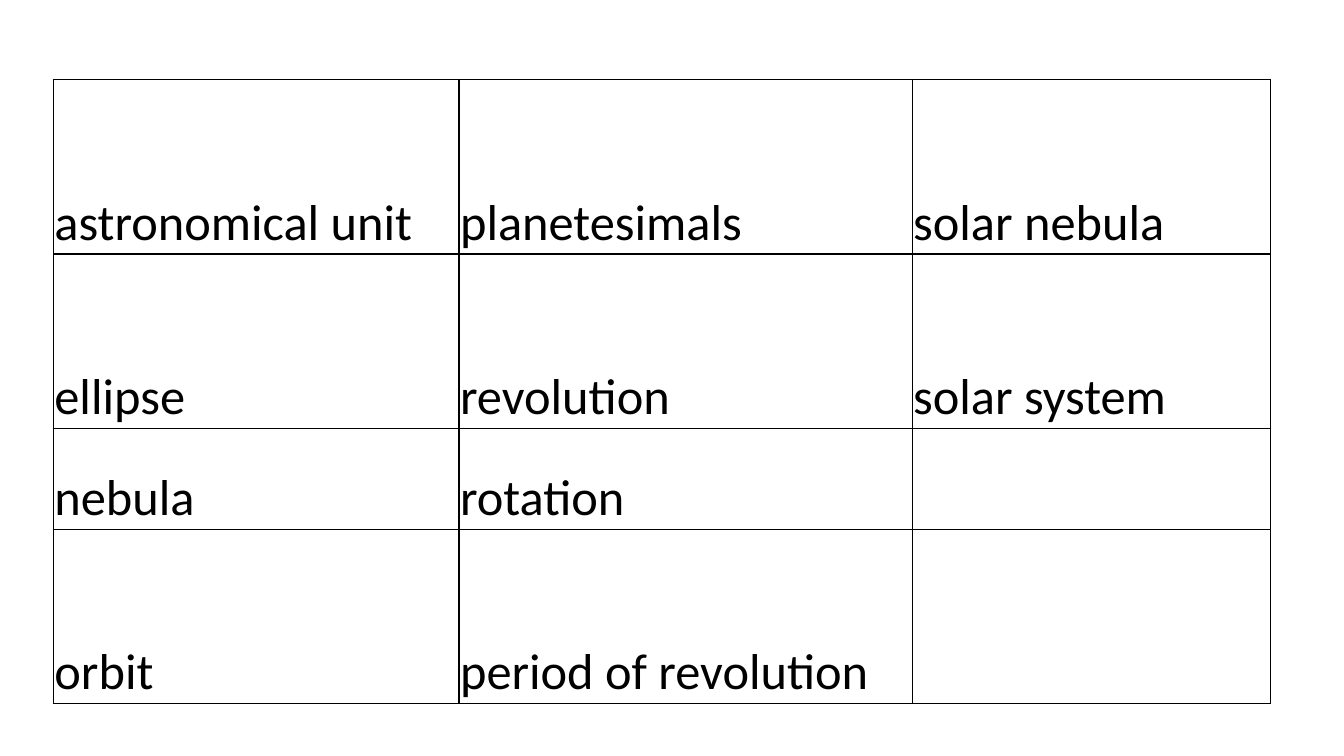
from dataclasses import dataclass

from lxml import etree
from pptx import Presentation
from pptx import util as u
from pptx.dml import color
from pptx.enum import text
from pptx.oxml import ns


@dataclass(frozen=True)
class Theme:
    ink: str = "000000"
    font: str = "Calibri"
    size: int = 36
    line: int = 1


THEME = Theme()
WORDS = [
    ["astronomical unit", "planetesimals", "solar nebula"],
    ["ellipse", "revolution", "solar system"],
    ["nebula", "rotation", ""],
    ["orbit", "period of revolution", ""],
]
WIDTHS = [4.02, 4.49, 3.55]
HEIGHTS = [1.73, 1.73, 1, 1.73]


def border(cell):
    props = cell._tc.get_or_add_tcPr()
    for index, side in enumerate(("lnL", "lnR", "lnT", "lnB")):
        line = etree.Element(ns.qn(f"a:{side}"), w=str(u.Pt(THEME.line)))
        fill = etree.SubElement(line, ns.qn("a:solidFill"))
        etree.SubElement(fill, ns.qn("a:srgbClr"), val=THEME.ink)
        props.insert(index, line)


def write(cell, word):
    cell.fill.background()
    border(cell)
    cell.vertical_anchor = text.MSO_ANCHOR.BOTTOM
    cell.margin_left = cell.margin_right = cell.margin_top = u.Inches(0.01)
    cell.margin_bottom = 0
    if not word:
        return
    run = cell.text_frame.paragraphs[0].add_run()
    run.text = word
    run.font.name = THEME.font
    run.font.size = u.Pt(THEME.size)
    run.font.color.rgb = color.RGBColor.from_string(THEME.ink)


def word_grid(slide, left, top, width, height):
    frame = slide.shapes.add_table(
        len(WORDS), len(WIDTHS),
        u.Inches(left), u.Inches(top), u.Inches(width), u.Inches(height))
    grid = frame.table
    grid.first_row = grid.horz_banding = False
    for col, share in zip(grid.columns, WIDTHS):
        col.width = u.Inches(width * share / sum(WIDTHS))
    for row, share, words in zip(grid.rows, HEIGHTS, WORDS):
        row.height = u.Inches(height * share / sum(HEIGHTS))
        for cell, word in zip(row.cells, words):
            write(cell, word)


def main():
    deck = Presentation()
    deck.slide_width, deck.slide_height = u.Inches(13.33), u.Inches(7.5)
    slide = deck.slides.add_slide(deck.slide_layouts[6])
    word_grid(slide, 0.53, 0.79, 12.07, 6.19)
    deck.save("out.pptx")


if __name__ == "__main__":
    main()
